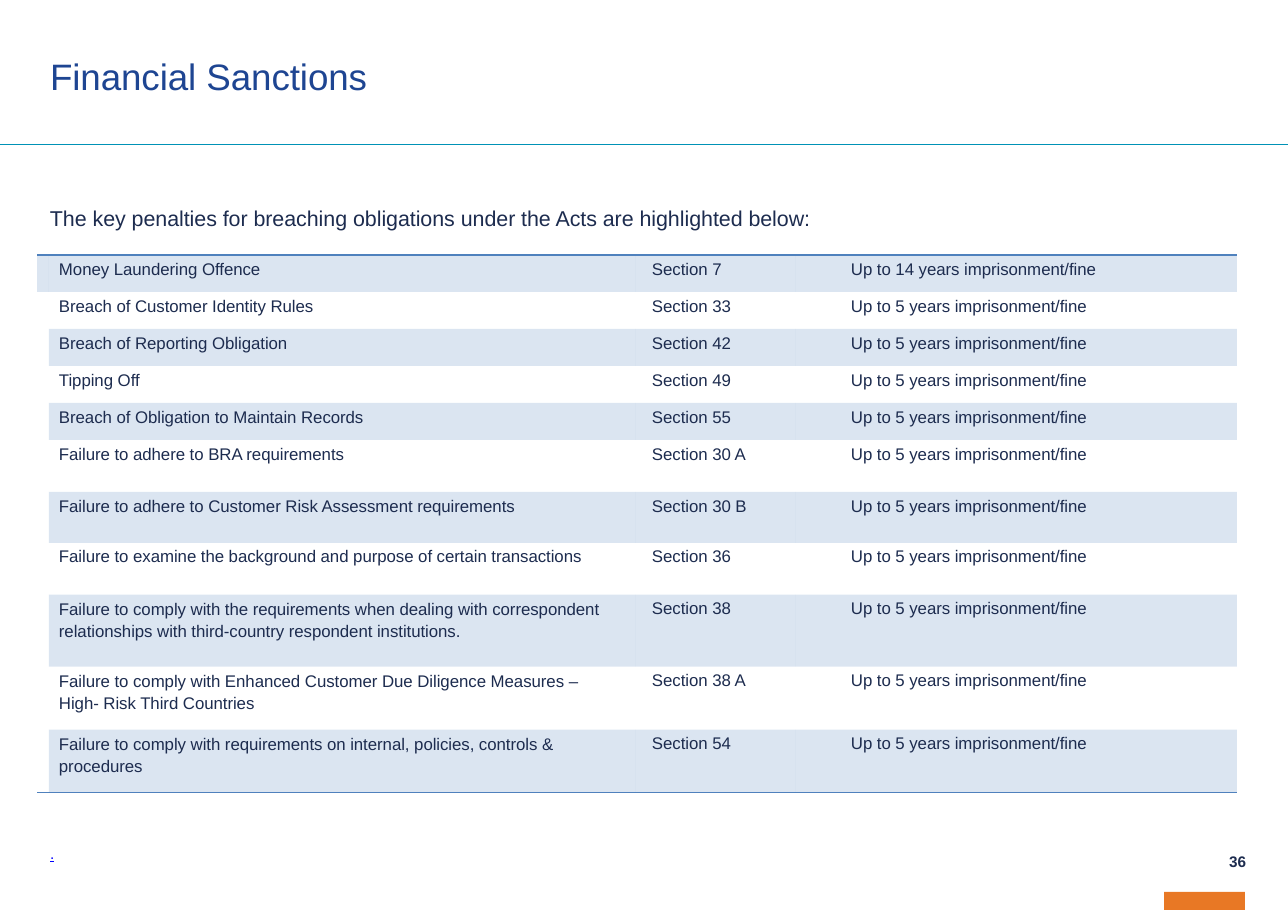
from dataclasses import dataclass
from typing import Optional

from lxml.etree import SubElement
from pptx import Presentation
from pptx.dml.color import RGBColor
from pptx.enum.shapes import MSO_CONNECTOR, MSO_SHAPE
from pptx.enum.text import PP_ALIGN
from pptx.oxml import parse_xml
from pptx.oxml.ns import nsdecls, qn
from pptx.util import Pt

EMU_PER_PX = 8298
NO_TABLE_STYLE = "{2D5ABB26-0587-4C30-8999-92F81FD0307C}"


@dataclass(frozen=True)
class Theme:
    font: str = "Arial"
    heading: str = "1E4592"
    ink: str = "1D2C4F"
    link: str = "0000FF"
    rule: str = "0092B6"
    accent: str = "E87825"
    band: str = "4F81BD"
    band_alpha: str = "20000"
    heading_size: int = 24
    intro_size: int = 14
    table_size: int = 11
    footer_size: int = 10


THEME = Theme()


@dataclass(frozen=True)
class Label:
    text: str
    box: tuple[int, int, int, int]
    size: int
    color: str
    margin_top: int = 0
    bold: bool = False
    underline: bool = False
    align: PP_ALIGN = PP_ALIGN.LEFT


@dataclass(frozen=True)
class Penalty:
    offence: str
    section: str
    height: int
    years: int = 5
    wraps: bool = False


@dataclass(frozen=True)
class Column:
    width: int
    margin_left: int = 0
    margin_right: int = 0


LABELS = [
    Label("Financial Sanctions", (50, 48, 586, 47), THEME.heading_size, THEME.heading, 6),
    Label("The key penalties for breaching obligations under the Acts are highlighted below:",
          (50, 202, 1000, 28), THEME.intro_size, THEME.ink, 3),
    Label(".", (50, 844, 144, 19), THEME.footer_size, THEME.link, underline=True),
    Label("36", (1196, 852, 50, 19), THEME.footer_size, THEME.ink, bold=True,
          align=PP_ALIGN.RIGHT),
]

PENALTIES = [
    Penalty("Money Laundering Offence", "Section 7", 37, years=14),
    Penalty("Breach of Customer Identity Rules", "Section 33", 37),
    Penalty("Breach of Reporting Obligation", "Section 42", 37),
    Penalty("Tipping Off", "Section 49", 37),
    Penalty("Breach of Obligation to Maintain Records", "Section 55", 37),
    Penalty("Failure to adhere to BRA requirements", "Section 30 A", 52),
    Penalty("Failure to adhere to Customer Risk Assessment requirements", "Section 30 B", 51),
    Penalty("Failure to examine the background and purpose of certain transactions",
            "Section 36", 52),
    Penalty("Failure to comply with the requirements when dealing with correspondent "
            "relationships with third-country respondent institutions.",
            "Section 38", 72, wraps=True),
    Penalty("Failure to comply with Enhanced Customer Due Diligence Measures – "
            "High- Risk Third Countries", "Section 38 A", 63, wraps=True),
    Penalty("Failure to comply with requirements on internal, policies, controls & procedures",
            "Section 54", 63, wraps=True),
]

COLUMNS = [Column(12), Column(587, 10, 20), Column(160, 16), Column(441, 55)]


def px(length: int) -> int:
    return length * EMU_PER_PX


def rgb(color: str) -> RGBColor:
    return RGBColor.from_string(color)


def apply_format(target, values: dict) -> None:
    for name, value in values.items():
        setattr(target, name, value)


def write(paragraph, text: str, size: int, color: str, **font_values) -> None:
    """Put slightly tightened text into a paragraph."""
    run = paragraph.add_run()
    run.text = text
    apply_format(run.font, {"name": THEME.font, "size": Pt(size), **font_values})
    run.font.color.rgb = rgb(color)
    run.font._element.set("spc", "-5")


def add_label(slide, label: Label) -> None:
    frame = slide.shapes.add_textbox(*map(px, label.box)).text_frame
    apply_format(frame, {"word_wrap": True, "margin_left": 0, "margin_right": 0,
                         "margin_top": px(label.margin_top), "margin_bottom": 0})
    paragraph = frame.paragraphs[0]
    paragraph.alignment = label.align
    write(paragraph, label.text, label.size, label.color,
          bold=label.bold, underline=label.underline)


def add_rule(slide, width: int, top: int) -> None:
    rule = slide.shapes.add_connector(MSO_CONNECTOR.STRAIGHT, 0, px(top), px(width), px(top))
    rule.line.color.rgb = rgb(THEME.rule)
    rule.line.width = Pt(0.5)
    SubElement(rule.element.spPr, qn("a:effectLst"))


def add_accent(slide) -> None:
    accent = slide.shapes.add_shape(MSO_SHAPE.RECTANGLE, px(1164), px(892), px(81), px(18))
    accent.shadow.inherit = False
    accent.fill.solid()
    accent.fill.fore_color.rgb = rgb(THEME.accent)
    accent.line.fill.background()


def shade(cell, banded: bool) -> None:
    if not banded:
        cell.fill.background()
        return
    cell.fill.solid()
    cell.fill.fore_color.rgb = rgb(THEME.band)
    tint = cell._tc.tcPr.find(f".//{qn('a:srgbClr')}")
    SubElement(tint, qn("a:alpha")).set("val", THEME.band_alpha)


def add_border(cell, edge: str) -> None:
    border = parse_xml(
        f'<a:{edge} {nsdecls("a")} w="{Pt(1)}"><a:solidFill>'
        f'<a:srgbClr val="{THEME.band}"/></a:solidFill></a:{edge}>')
    cell._tc.get_or_add_tcPr().insert(0, border)


def fill_cell(cell, text: str, column: Column, banded: bool, loose: bool) -> None:
    apply_format(cell, {"margin_left": px(column.margin_left),
                        "margin_right": px(column.margin_right),
                        "margin_top": px(1 if loose else 5), "margin_bottom": 0})
    paragraph = cell.text_frame.paragraphs[0]
    if loose:
        paragraph.line_spacing = 1.22
    if text:
        write(paragraph, text, THEME.table_size, THEME.ink)
    else:
        paragraph.font.size = Pt(THEME.table_size)
    shade(cell, banded)


def add_penalty_table(slide, left: int, top: int) -> None:
    width = sum(column.width for column in COLUMNS)
    height = sum(penalty.height for penalty in PENALTIES)
    frame = slide.shapes.add_table(len(PENALTIES), len(COLUMNS),
                                   px(left), px(top), px(width), px(height))
    frame.element.find(f".//{qn('a:tableStyleId')}").text = NO_TABLE_STYLE
    table = frame.table
    apply_format(table, {"first_row": False, "horz_banding": False})
    for table_column, column in zip(table.columns, COLUMNS):
        table_column.width = px(column.width)

    last = len(PENALTIES) - 1
    for row, penalty in enumerate(PENALTIES):
        table.rows[row].height = px(penalty.height)
        entries: list[Optional[str]] = [
            "", penalty.offence, penalty.section, f"Up to {penalty.years} years imprisonment/fine"]
        for index, (entry, column) in enumerate(zip(entries, COLUMNS)):
            cell = table.cell(row, index)
            banded = row % 2 == 0 and (index > 0 or row == 0)
            fill_cell(cell, entry, column, banded, penalty.wraps and index == 1)
            if row == 0:
                add_border(cell, "lnT")
            if row == last or (row, index) == (1, 0):
                add_border(cell, "lnB")
    table.cell(1, 0).merge(table.cell(last, 0))


def main() -> None:
    presentation = Presentation()
    apply_format(presentation, {"slide_width": px(1288), "slide_height": px(910)})
    slide = presentation.slides.add_slide(presentation.slide_layouts[6])
    add_rule(slide, 1288, 144)
    add_accent(slide)
    for label in LABELS:
        add_label(slide, label)
    add_penalty_table(slide, 37, 255)
    presentation.save("out.pptx")


if __name__ == "__main__":
    main()
